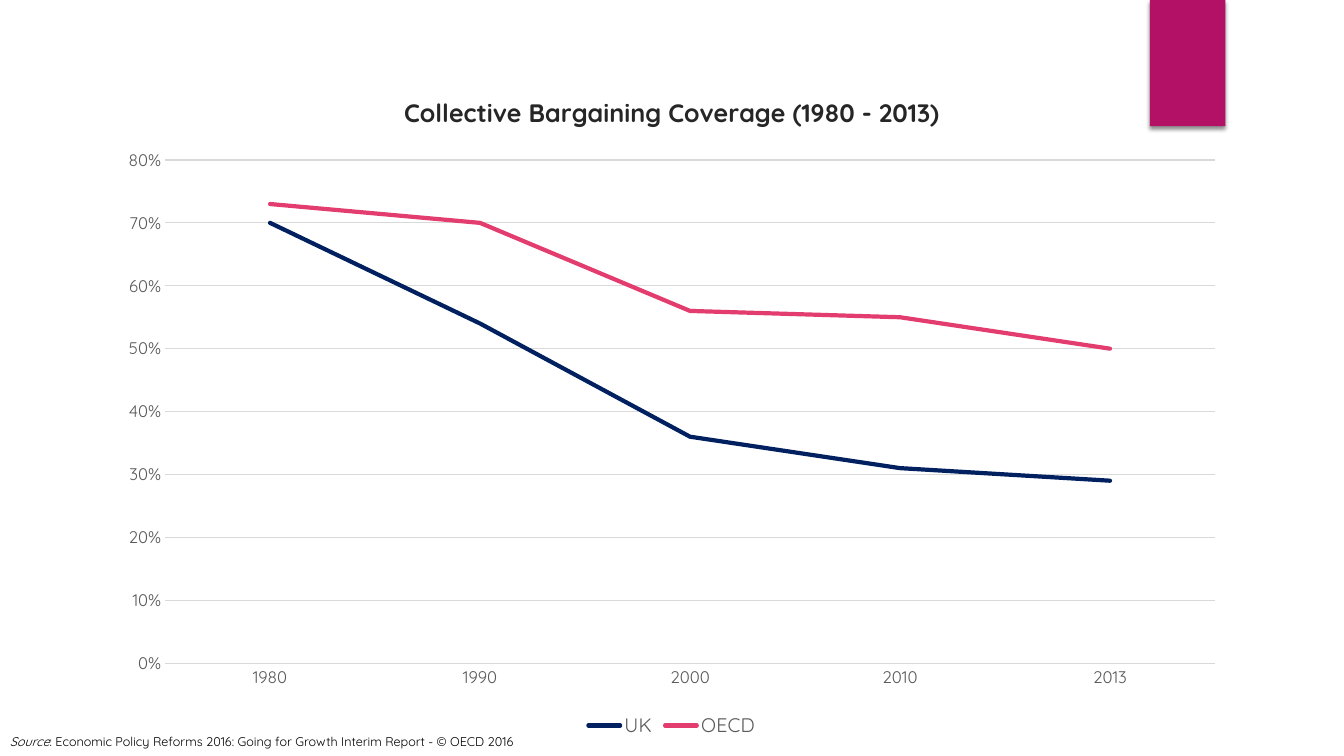
"""Build the collective bargaining coverage slide."""
from lxml.etree import SubElement
from pptx import Presentation
from pptx.chart.data import CategoryChartData as ChartData
from pptx.dml.color import RGBColor
from pptx.enum.chart import XL_CHART_TYPE as ChartType
from pptx.enum.chart import XL_LEGEND_POSITION as LegendPosition
from pptx.enum.chart import XL_TICK_MARK as TickMark
from pptx.enum.shapes import MSO_SHAPE as Shape
from pptx.enum.text import MSO_AUTO_SIZE as AutoSize
from pptx.oxml.ns import qn
from pptx.util import Cm, Pt

COLOURS = {"band": "B31166", "title": "262626", "label": "595959", "grid": "D9D9D9",
           "text": "000000", "UK": "002060", "OECD": "E33D6F"}
YEARS = ["1980", "1990", "2000", "2010", "2013"]
COVERAGE = {"UK": [0.7, 0.54, 0.36, 0.31, 0.29],
            "OECD": [0.73, 0.7, 0.56, 0.55, 0.5]}


def colour(name):
    """Return the named colour."""
    return RGBColor.from_string(COLOURS[name])


def set_values(target, values):
    """Set each attribute in values on the target."""
    for name, value in values.items():
        setattr(target, name, value)


def style_font(font, size, shade, **values):
    """Give a font its face, size, colour and further values."""
    set_values(font, {"name": "Quicksand", "size": Pt(size), **values})
    font.color.rgb = colour(shade)


def style_line(line, shade, width):
    """Give a line its colour and width in points."""
    line.color.rgb = colour(shade)
    line.width = Pt(width)


def add_band(page, left, top, width, height):
    """Add the coloured band with its soft shadow."""
    band = page.shapes.add_shape(Shape.RECTANGLE, left, top, width, height)
    band.fill.solid()
    band.fill.fore_color.rgb = colour("band")
    band.line.fill.background()
    band.shadow.inherit = False
    effects = band._element.spPr.find(qn("a:effectLst"))
    shadow = SubElement(effects, qn("a:outerShdw"), blurRad=str(Pt(3)), dist=str(Pt(2)),
                        dir="5400000", algn="ctr", rotWithShape="0")
    shade = SubElement(shadow, qn("a:srgbClr"), val=COLOURS["text"])
    SubElement(shade, qn("a:alpha"), val="45000")


def style_axes(chart):
    """Format both axes and the gridlines."""
    for axis in (chart.category_axis, chart.value_axis):
        set_values(axis, {"major_tick_mark": TickMark.NONE, "minor_tick_mark": TickMark.NONE})
        style_font(axis.tick_labels.font, 12, "label")
    style_line(chart.category_axis.format.line, "grid", 0.75)
    scale = chart.value_axis
    set_values(scale, {"minimum_scale": 0, "maximum_scale": 0.8, "major_unit": 0.1})
    set_values(scale.tick_labels, {"number_format": "0%", "number_format_is_linked": False})
    scale.format.line.fill.background()
    style_line(scale.major_gridlines.format.line, "grid", 0.75)


def add_coverage_chart(page, left, top, width, height):
    """Add the line chart with its title and legend."""
    data = ChartData(number_format="0%")
    data.categories = YEARS
    for name, values in COVERAGE.items():
        data.add_series(name, values)
    chart = page.shapes.add_chart(ChartType.LINE, left, top, width, height, data).chart
    style_font(chart.font, 10, "text")
    frame = chart.chart_title.text_frame
    frame.text = "Collective Bargaining Coverage (1980 - 2013)"
    style_font(frame.paragraphs[0].runs[0].font, 18, "title", bold=True)
    style_axes(chart)
    chart.has_legend = True
    set_values(chart.legend, {"position": LegendPosition.BOTTOM, "include_in_layout": False})
    style_font(chart.legend.font, 14, "label")
    chart.plots[0].vary_by_categories = False
    for series in chart.plots[0].series:
        series.smooth = False
        style_line(series.format.line, series.name, 3)
        series.format.line._get_or_add_ln().set("cap", "rnd")


def add_source(page, left, top, width, height):
    """Add the source note."""
    frame = page.shapes.add_textbox(left, top, width, height).text_frame
    set_values(frame, {"word_wrap": False, "auto_size": AutoSize.SHAPE_TO_FIT_TEXT})
    para = frame.paragraphs[0]
    note = ": Economic Policy Reforms 2016: Going for Growth Interim Report - © OECD 2016"
    for text, italic in (("Source", True), (note, False)):
        span = para.add_run()
        span.text = text
        style_font(span.font, 9, "text", italic=italic)


def main():
    """Build and save the deck."""
    deck = Presentation()
    set_values(deck, {"slide_width": Cm(33.87), "slide_height": Cm(19.05)})
    page = deck.slides.add_slide(deck.slide_layouts[6])
    add_band(page, Cm(28.98), Cm(0), Cm(1.9), Cm(3.18))
    add_coverage_chart(page, Cm(2.67), Cm(1.78), Cm(28.52), Cm(16.92))
    add_source(page, Cm(0), Cm(18.36), Cm(14), Cm(0.64))
    deck.save("out.pptx")


if __name__ == "__main__":
    main()
